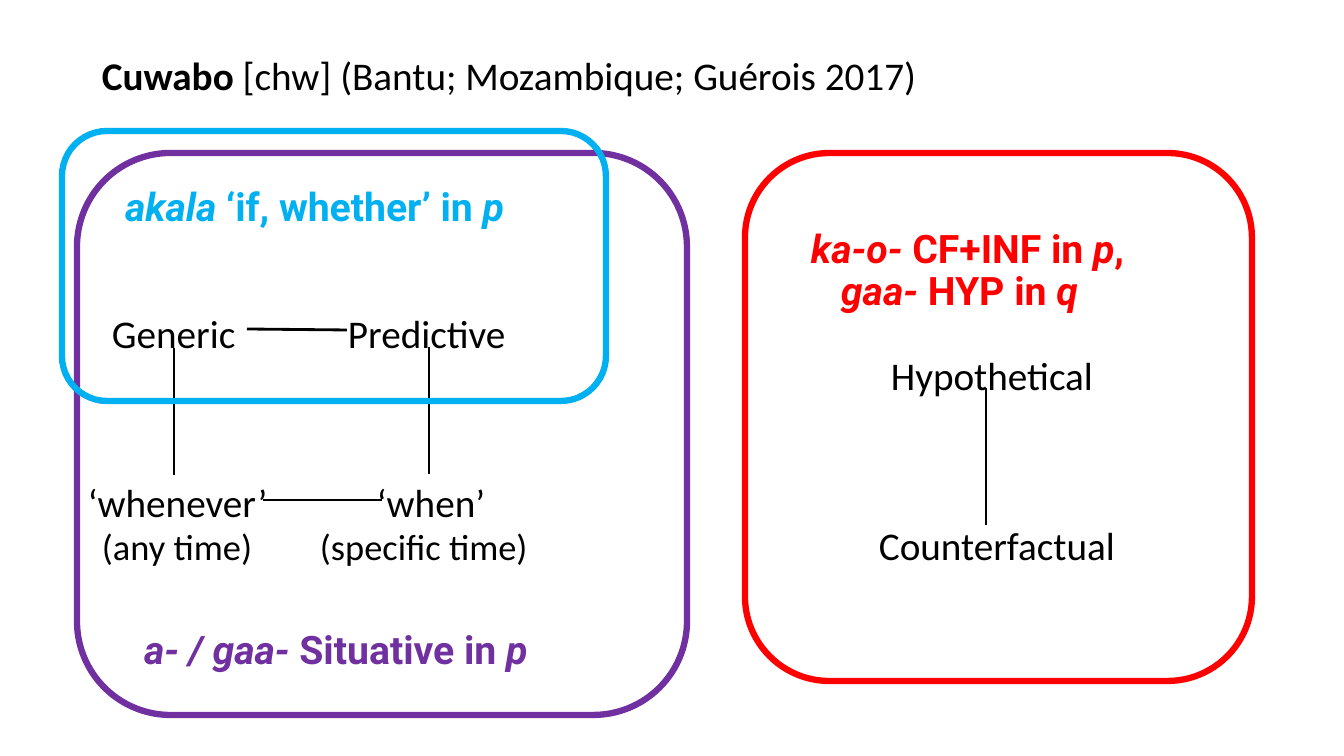
import pptx
import pptx.util
import pptx.dml.color
import pptx.enum.shapes
import pptx.oxml

PX = 914400 / 100.8
BLACK = pptx.dml.color.RGBColor(0x00, 0x00, 0x00)
CYAN = pptx.dml.color.RGBColor(0x00, 0xB0, 0xF0)
RED = pptx.dml.color.RGBColor(0xFF, 0x00, 0x00)
PURPLE = pptx.dml.color.RGBColor(0x70, 0x30, 0xA0)


def emu(*nums):
    """Turn px lengths into EMU."""
    return [pptx.util.Emu(round(n * PX)) for n in nums]


def label(slide, left, base, width, text, size=28, color=BLACK):
    """Write one line on a baseline; *starred* parts are bold if black, else italic."""
    box = slide.shapes.add_textbox(*emu(left, base - round(size * 1.32), width, 48))
    frame = box.text_frame
    frame.word_wrap = True
    frame.margin_left = frame.margin_right = 0
    frame.margin_top = frame.margin_bottom = 0
    para = frame.paragraphs[0]
    for i, part in enumerate(text.split("*")):
        if not part:
            continue
        run = para.add_run()
        run.text = part
        font = run.font
        font.size = pptx.util.Pt(size)
        font.color.rgb = color
        strong = i % 2 == 1
        font.name = "Calibri" if color == BLACK else "Roboto"
        font.bold = strong or color != BLACK
        font.italic = strong and color != BLACK


deck = pptx.Presentation()
deck.slide_width, deck.slide_height = emu(1344, 756)
slide = deck.slides.add_slide(deck.slide_layouts[6])

# Title and forms
label(slide, 102, 88, 1100, "*Cuwabo* [chw] (Bantu; Mozambique; Guérois 2017)")
for left, base, text, color in [
    (125, 219, "*akala* ‘if, whether’ in *p*", CYAN),
    (811, 261, "*ka-o-* CF+INF in *p*,", RED),
    (841, 303, "*gaa-* HYP in *q*", RED),
    (144, 662, "*a- / gaa-* Situative in *p*", PURPLE),
]:
    label(slide, left, base, 420, text, color=color)

# Meanings
for left, base, text, size in [
    (112, 346, "Generic", 28),
    (348, 346, "Predictive", 28),
    (891, 388, "Hypothetical", 28),
    (88, 515, "‘whenever’", 28),
    (377, 515, "‘when’", 28),
    (102, 558, "(any time)", 26),
    (320, 558, "(specific time)", 26),
    (879, 558, "Counterfactual", 28),
]:
    label(slide, left, base, 260, text, size)

# Links between meanings
for ends, weight in [
    ((986, 388, 986, 525), 2),
    ((247, 329, 347, 330), 2),
    ((174, 348, 174, 475), 2),
    ((429, 347, 429, 474), 2),
    ((263, 500, 382, 500), 2),
]:
    link = slide.shapes.add_connector(
        pptx.enum.shapes.MSO_CONNECTOR.STRAIGHT, *emu(*ends))
    link.line.color.rgb = BLACK
    link.line.width = pptx.util.Pt(weight)
    link._element.spPr.append(pptx.oxml.parse_xml(
        '<a:effectLst xmlns:a="http://schemas.openxmlformats.org/drawingml/2006/main"/>'))

# Areas covered by each form
for area, color in [
    ((77, 153, 610, 562), PURPLE),
    ((745, 153, 507, 528), RED),
    ((62, 131, 544, 270), CYAN),
]:
    ring = slide.shapes.add_shape(
        pptx.enum.shapes.MSO_SHAPE.ROUNDED_RECTANGLE, *emu(*area))
    ring.shadow.inherit = False
    ring.fill.background()
    ring.line.color.rgb = color
    ring.line.width = pptx.util.Pt(4.5)

deck.save("out.pptx")
